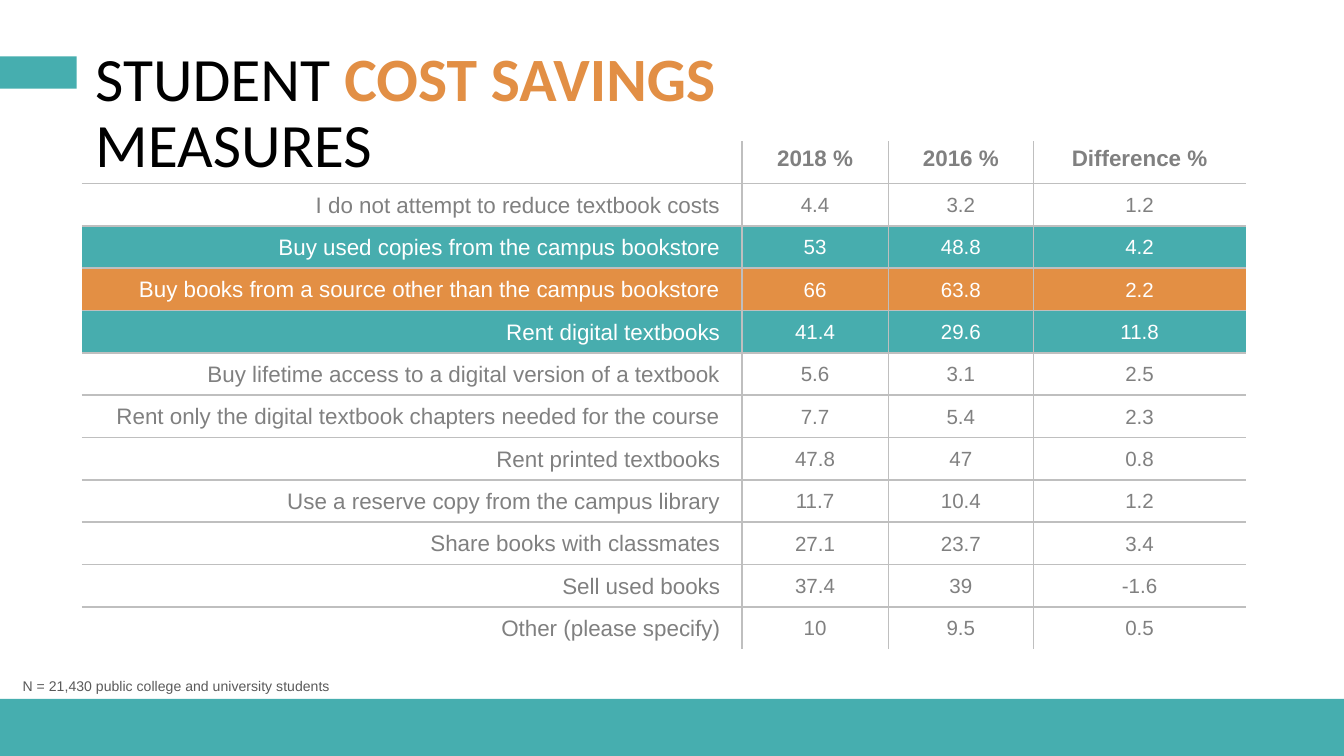
from typing import NamedTuple, Optional

from lxml import etree
from pptx import Presentation
from pptx.dml.color import RGBColor
from pptx.enum.shapes import MSO_SHAPE
from pptx.enum.text import MSO_ANCHOR, PP_ALIGN
from pptx.oxml.ns import qn
from pptx.util import Inches, Pt

RECT = MSO_SHAPE.RECTANGLE
TOP, MIDDLE = MSO_ANCHOR.TOP, MSO_ANCHOR.MIDDLE
CENTER, RIGHT = PP_ALIGN.CENTER, PP_ALIGN.RIGHT

BLACK = RGBColor(0x00, 0x00, 0x00)
WHITE = RGBColor(0xFF, 0xFF, 0xFF)
TEAL = RGBColor(0x46, 0xAE, 0xAF)
ROW_TEAL = RGBColor(0x47, 0xAD, 0xAE)
ORANGE = RGBColor(0xE2, 0x8F, 0x45)
ROW_ORANGE = RGBColor(0xE3, 0x8F, 0x44)
GRAY = RGBColor(0x80, 0x80, 0x80)
DARK_GRAY = RGBColor(0x59, 0x59, 0x59)
RULE_GRAY = RGBColor(0xBF, 0xBF, 0xBF)

SLIDE_WIDTH = 10
SLIDE_HEIGHT = SLIDE_WIDTH * 9 / 16
FOOTER_TOP = 5.2
TABLE_HEIGHT = 3.78
COLUMN_WIDTHS = (4.91, 1.09, 1.08, 1.58)
HEADERS = ("2018 %", "2016 %", "Difference %")


class Measure(NamedTuple):
    label: str
    values: tuple[str, str, str]
    fill: Optional[RGBColor] = None


class CellFormat(NamedTuple):
    size: float
    align: PP_ALIGN
    anchor: MSO_ANCHOR
    margins: tuple[float, float, float, float]
    bold: bool = False


HEADER = CellFormat(12, CENTER, TOP, (0.07, 0.04, 0.07, 0.04), True)
LABEL = CellFormat(12, RIGHT, MIDDLE, (0.01, 0.01, 0.16, 0))
VALUE = CellFormat(11, CENTER, MIDDLE, (0.01, 0.01, 0.01, 0))

MEASURES = (
    Measure("I do not attempt to reduce textbook costs", ("4.4", "3.2", "1.2")),
    Measure("Buy used copies from the campus bookstore", ("53", "48.8", "4.2"), ROW_TEAL),
    Measure("Buy books from a source other than the campus bookstore",
            ("66", "63.8", "2.2"), ROW_ORANGE),
    Measure("Rent digital textbooks", ("41.4", "29.6", "11.8"), ROW_TEAL),
    Measure("Buy lifetime access to a digital version of a textbook", ("5.6", "3.1", "2.5")),
    Measure("Rent only the digital textbook chapters needed for the course",
            ("7.7", "5.4", "2.3")),
    Measure("Rent printed textbooks", ("47.8", "47", "0.8")),
    Measure("Use a reserve copy from the campus library", ("11.7", "10.4", "1.2")),
    Measure("Share books with classmates", ("27.1", "23.7", "3.4")),
    Measure("Sell used books", ("37.4", "39", "-1.6")),
    Measure("Other (please specify)", ("10", "9.5", "0.5")),
)


def add_run(p, text: str, size: float, color: RGBColor, name: str = "Arial",
            bold: bool = False) -> None:
    r = p.add_run()
    r.text = text
    for key, value in {"name": name, "size": Pt(size), "bold": bold}.items():
        setattr(r.font, key, value)
    r.font.color.rgb = color


def add_bar(slide, left: float, top: float, width: float, height: float) -> None:
    sp = slide.shapes.add_shape(RECT, Inches(left), Inches(top), Inches(width), Inches(height))
    sp.shadow.inherit = False
    sp.fill.solid()
    sp.fill.fore_color.rgb = TEAL
    sp.line.fill.background()


def add_text_box(slide, left: float, top: float, width: float, height: float,
                 wrap: bool, spacing: float):
    """Add a text box and return its first paragraph."""
    tf = slide.shapes.add_textbox(
        Inches(left), Inches(top), Inches(width), Inches(height)).text_frame
    tf.word_wrap = wrap
    p = tf.paragraphs[0]
    p.line_spacing = spacing
    return p


def set_borders(cell, sides: dict[str, bool]) -> None:
    """Rule the sides marked true and clear the others; call before filling."""
    tc_pr = cell._tc.get_or_add_tcPr()
    for side, ruled in sides.items():
        ln = etree.SubElement(tc_pr, qn(f"a:ln{side}"), w=str(Pt(1)))
        if ruled:
            fill = etree.SubElement(ln, qn("a:solidFill"))
            etree.SubElement(fill, qn("a:srgbClr"), val=str(RULE_GRAY))
        else:
            etree.SubElement(ln, qn("a:noFill"))


def write_cell(cell, text: str, color: RGBColor, fmt: CellFormat) -> None:
    sides = ("margin_left", "margin_top", "margin_right", "margin_bottom")
    for side, margin in zip(sides, fmt.margins):
        setattr(cell, side, Inches(margin))
    cell.vertical_anchor = fmt.anchor
    p = cell.text_frame.paragraphs[0]
    p.alignment = fmt.align
    if text:
        add_run(p, text, fmt.size, color, bold=fmt.bold)


def add_measures_table(slide) -> None:
    n_rows, n_cols = len(MEASURES) + 1, len(COLUMN_WIDTHS)
    table = slide.shapes.add_table(
        n_rows, n_cols, Inches(0.61), Inches(1.05),
        Inches(sum(COLUMN_WIDTHS)), Inches(TABLE_HEIGHT)).table
    table.first_row = table.horz_banding = False
    for column, width in zip(table.columns, COLUMN_WIDTHS):
        column.width = Inches(width)
    for row in table.rows:
        row.height = Inches(TABLE_HEIGHT / n_rows)

    for i, measure in enumerate((Measure("", HEADERS), *MEASURES)):
        color = WHITE if measure.fill else GRAY
        for j, text in enumerate((measure.label, *measure.values)):
            cell = table.cell(i, j)
            set_borders(cell, {"L": j > 0, "R": j < n_cols - 1,
                               "T": i > 0, "B": i < n_rows - 1})
            if measure.fill:
                cell.fill.solid()
                cell.fill.fore_color.rgb = measure.fill
            else:
                cell.fill.background()
            fmt = LABEL if j == 0 else HEADER if i == 0 else VALUE
            write_cell(cell, text, color, fmt)


def main() -> None:
    prs = Presentation()
    prs.slide_width, prs.slide_height = Inches(SLIDE_WIDTH), Inches(SLIDE_HEIGHT)
    slide = prs.slides.add_slide(prs.slide_layouts[6])

    add_bar(slide, 0, FOOTER_TOP, SLIDE_WIDTH, SLIDE_HEIGHT - FOOTER_TOP)
    add_bar(slide, 0, 0.42, 0.57, 0.24)

    title = add_text_box(slide, 0.61, 0.31, 6.29, 0.57, True, 0.9)
    add_run(title, "STUDENT ", 33, BLACK, "Calibri")
    add_run(title, "COST SAVINGS ", 33, ORANGE, "Calibri", True)
    add_run(title, "MEASURES", 33, BLACK, "Calibri")

    add_measures_table(slide)

    note = add_text_box(slide, 0.07, 4.97, 2.51, 0.25, False, 1.2)
    add_run(note, "N = 21,430 public college and university students", 7.5, DARK_GRAY)

    prs.save("out.pptx")


if __name__ == "__main__":
    main()
